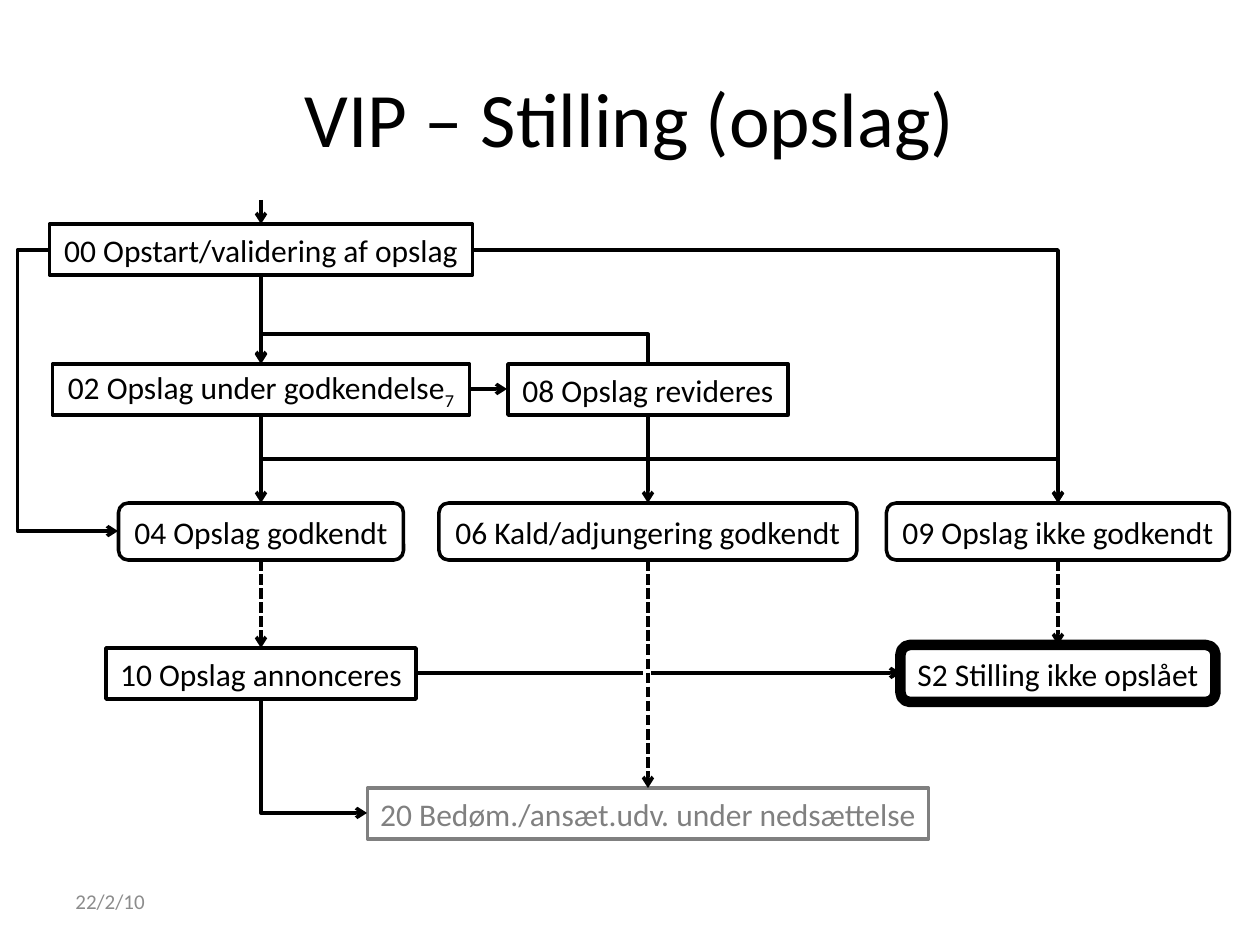
"""Build the flow chart slide for a VIP position posting."""
import dataclasses

import lxml.etree
import pptx
import pptx.dml.color
import pptx.enum.dml
import pptx.enum.shapes
import pptx.enum.text
import pptx.oxml.ns
import pptx.util

SCALE = 914400 / 126
SHAPES = pptx.enum.shapes.MSO_SHAPE
CONNECTORS = pptx.enum.shapes.MSO_CONNECTOR
ALIGN = pptx.enum.text.PP_ALIGN
ANCHOR = pptx.enum.text.MSO_ANCHOR


@dataclasses.dataclass(frozen=True)
class Theme:
    """Colours, font and sizes of the slide."""
    font: str = "Calibri"
    ink: str = "000000"
    muted: str = "808080"
    date: str = "8C8C8C"
    paper: str = "FFFFFF"
    title_size: int = 44
    box_size: int = 18
    date_size: int = 12
    line: float = 2
    heavy_line: float = 6
    thin_line: float = 0.75


THEME = Theme()
LEFT, MIDDLE, RIGHT = 261, 648, 1058
STEP_HEIGHT, STATE_HEIGHT = 51, 57
START, REVIEW, DECISION, POSTING, COMMITTEE = 224, 364, 503, 648, 788
FINAL = 645


def px(length):
    """Turn pixels into EMU."""
    return pptx.util.Emu(round(length * SCALE))


def color(value):
    """Turn a hex string into a colour."""
    return pptx.dml.color.RGBColor.from_string(value)


def set_values(target, values):
    """Set each attribute of target from a dict."""
    for name, value in values.items():
        setattr(target, name, value)


def add_span(para, text, size, ink):
    """Append a formatted run to a paragraph."""
    span = para.add_run()
    span.text = text
    set_values(span.font, {"name": THEME.font, "size": pptx.util.Pt(size)})
    span.font.color.rgb = color(ink)
    return span


def style_line(line, ink, width):
    """Give a line its colour and width."""
    line.color.rgb = color(ink)
    line.width = pptx.util.Pt(width)


def add_title(page, text):
    """Place and fill the title placeholder."""
    title = page.shapes.title
    set_values(title, {"left": px(63), "top": px(38), "width": px(1134), "height": px(157)})
    title.text_frame.vertical_anchor = ANCHOR.MIDDLE
    para = title.text_frame.paragraphs[0]
    para.alignment = ALIGN.CENTER
    add_span(para, text, THEME.title_size, THEME.ink)


def add_date(page, text):
    """Add the date at the lower left."""
    box = page.shapes.add_textbox(px(63), px(876), px(294), px(50))
    set_values(box.text_frame, {"word_wrap": True, "vertical_anchor": ANCHOR.MIDDLE})
    add_span(box.text_frame.paragraphs[0], text, THEME.date_size, THEME.date)


def add_box(page, kind, center, top, width, text, ink=THEME.ink, weight=THEME.line, subscript=""):
    """Add an outlined box centred on a column."""
    height = STEP_HEIGHT if kind == SHAPES.FLOWCHART_PROCESS else STATE_HEIGHT
    box = page.shapes.add_shape(kind, px(center - width / 2), px(top), px(width), px(height))
    box.shadow.inherit = False
    box.fill.background()
    style_line(box.line, ink, weight)
    set_values(box.text_frame, {
        "word_wrap": False,
        "vertical_anchor": ANCHOR.MIDDLE,
        "auto_size": pptx.enum.text.MSO_AUTO_SIZE.SHAPE_TO_FIT_TEXT,
    })
    para = box.text_frame.paragraphs[0]
    para.alignment = ALIGN.CENTER
    add_span(para, text, THEME.box_size, ink)
    if subscript:
        span = add_span(para, subscript, THEME.box_size, ink)
        span._r.get_or_add_rPr().set("baseline", "-25000")


def add_arrow(page, start, end, kind=CONNECTORS.STRAIGHT, dashed=False):
    """Add a connector with an open arrowhead at its end."""
    arrow = page.shapes.add_connector(kind, *map(px, start + end))
    style_line(arrow.line, THEME.ink, THEME.line)
    if dashed:
        arrow.line.dash_style = pptx.enum.dml.MSO_LINE.SQUARE_DOT
    qn = pptx.oxml.ns.qn
    outline = arrow._element.spPr.find(qn("a:ln"))
    lxml.etree.SubElement(outline, qn("a:tailEnd"), type="arrow")
    lxml.etree.SubElement(arrow._element.spPr, qn("a:effectLst"))
    return arrow


def add_elbow(page, start, end, bend=None, vertical=False):
    """Add a bent arrow with one corner, or two if bend is given."""
    if vertical:
        (x1, y1), (x2, y2) = start, end
        mid_x, mid_y = (x1 + x2) / 2, (y1 + y2) / 2
        across, along = (y2 - y1) / 2, (x1 - x2) / 2
        start, end = (mid_x + across, mid_y + along), (mid_x - across, mid_y - along)
    properties = add_arrow(page, start, end, CONNECTORS.ELBOW)._element.spPr
    qn = pptx.oxml.ns.qn
    if vertical:
        properties.find(qn("a:xfrm")).set("rot", "16200000")
    geometry = properties.find(qn("a:prstGeom"))
    if bend is None:
        geometry.set("prst", "bentConnector2")
    else:
        guides = geometry.find(qn("a:avLst"))
        lxml.etree.SubElement(guides, qn("a:gd"), name="adj1", fmla=f"val {round(bend * 100000)}")


def add_gap(page):
    """Add the white strip that breaks the crossed line."""
    gap = page.shapes.add_shape(SHAPES.RECTANGLE, px(644), px(629), px(6), px(86))
    gap.shadow.inherit = False
    gap.fill.solid()
    gap.fill.fore_color.rgb = color(THEME.paper)
    style_line(gap.line, THEME.paper, THEME.thin_line)


def main():
    """Build and save the deck."""
    deck = pptx.Presentation()
    set_values(deck, {"slide_width": px(1260), "slide_height": px(945)})
    page = deck.slides.add_slide(deck.slide_layouts[5])
    add_title(page, "VIP – Stilling (opslag)")
    add_date(page, "22/2/10")

    step, state = SHAPES.FLOWCHART_PROCESS, SHAPES.FLOWCHART_ALTERNATE_PROCESS
    add_box(page, step, LEFT, START, 423, "00 Opstart/validering af opslag")
    add_box(page, step, LEFT, REVIEW, 417, "02 Opslag under godkendelse", subscript="7")
    add_box(page, step, MIDDLE, REVIEW, 280, "08 Opslag revideres")
    add_box(page, state, LEFT, DECISION, 285, "04 Opslag godkendt")
    add_box(page, state, MIDDLE, DECISION, 418, "06 Kald/adjungering godkendt")
    add_box(page, state, RIGHT, DECISION, 343, "09 Opslag ikke godkendt")
    add_box(page, step, LEFT, POSTING, 310, "10 Opslag annonceres")
    add_box(page, state, RIGHT, FINAL, 315, "S2 Stilling ikke opslået", weight=THEME.heavy_line)
    add_box(page, step, MIDDLE, COMMITTEE, 561, "20 Bedøm./ansæt.udv. under nedsættelse", ink=THEME.muted)

    review_end, decision_end = REVIEW + STEP_HEIGHT, DECISION + STATE_HEIGHT
    for start, end in (
        ((LEFT, 200), (LEFT, START)),
        ((LEFT, START + STEP_HEIGHT), (LEFT, REVIEW)),
        ((LEFT, review_end), (LEFT, DECISION)),
        ((MIDDLE, review_end), (MIDDLE, DECISION)),
        ((469, 389), (507, 389)),
        ((416, 673), (901, 673)),
    ):
        add_arrow(page, start, end)

    add_elbow(page, (MIDDLE, REVIEW), (LEFT, REVIEW - 1), bend=30, vertical=True)
    add_elbow(page, (LEFT, POSTING + STEP_HEIGHT), (367, 813), vertical=True)
    add_elbow(page, (472, 250), (RIGHT, DECISION))
    add_elbow(page, (49, 250), (118, 531), bend=-0.46)
    add_elbow(page, (LEFT, review_end), (RIGHT, DECISION), bend=0.5, vertical=True)

    add_gap(page)
    for column, bottom in ((LEFT, POSTING), (MIDDLE, COMMITTEE), (RIGHT, FINAL)):
        add_arrow(page, (column, decision_end), (column, bottom), dashed=True)
    deck.save("out.pptx")


if __name__ == "__main__":
    main()
